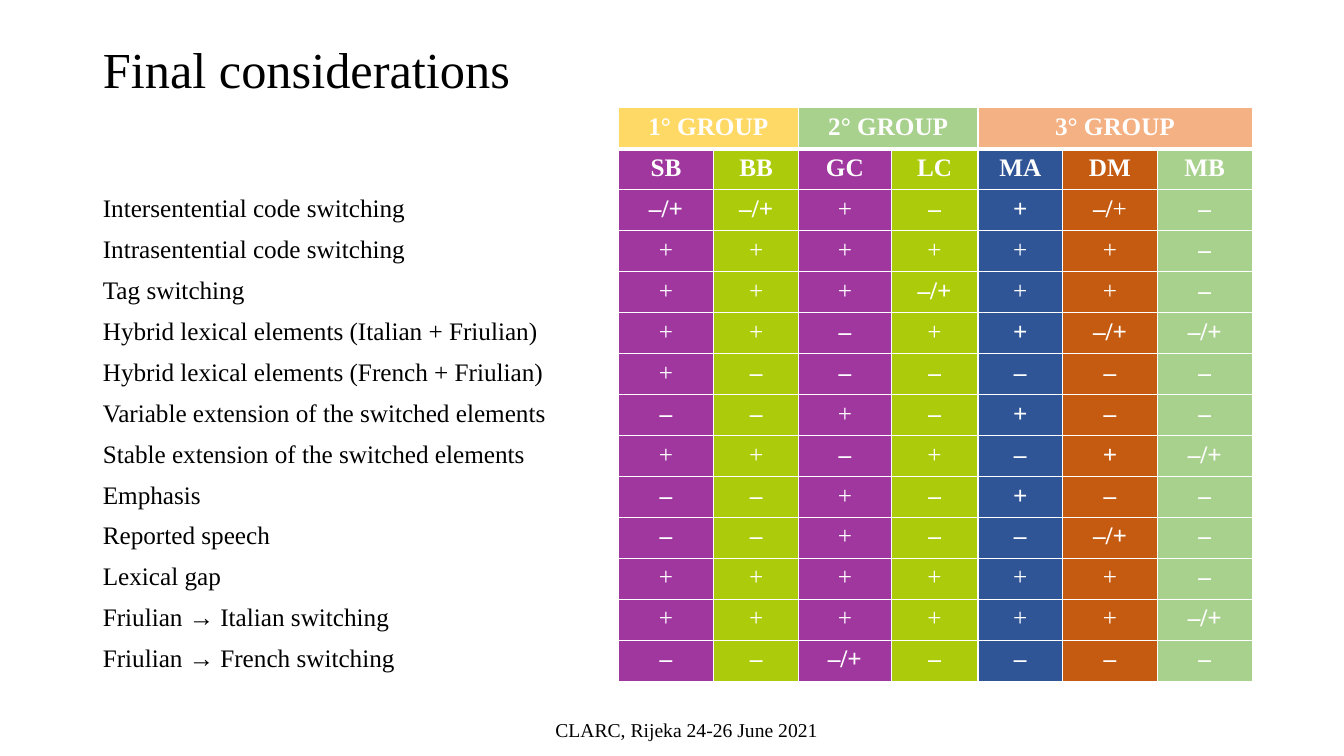
"""Build the "Final considerations" slide with its table of switching features by speaker."""
from lxml import etree
from pptx import Presentation
from pptx.dml.color import RGBColor
from pptx.enum import text
from pptx.oxml import ns
from pptx.util import Inches, Pt

FONT = "Times New Roman"
BLACK = RGBColor(0x00, 0x00, 0x00)
WHITE = RGBColor(0xFF, 0xFF, 0xFF)
YELLOW = RGBColor(0xFF, 0xD9, 0x66)
GREEN = RGBColor(0xA9, 0xD1, 0x8E)
PEACH = RGBColor(0xF4, 0xB1, 0x83)
PURPLE = RGBColor(0x9F, 0x37, 0x9F)
LIME = RGBColor(0xAB, 0xCB, 0x0B)
BLUE = RGBColor(0x2F, 0x55, 0x97)
ORANGE = RGBColor(0xC5, 0x5A, 0x11)

GROUPS = [("1° GROUP", YELLOW, 1, 2), ("2° GROUP", GREEN, 3, 4), ("3° GROUP", PEACH, 5, 7)]
SPEAKERS = [("SB", PURPLE), ("BB", LIME), ("GC", PURPLE), ("LC", LIME),
            ("MA", BLUE), ("DM", ORANGE), ("MB", GREEN)]
FEATURES = [
    ("Intersentential code switching", "–/+ –/+ + – + –/+ –"),
    ("Intrasentential code switching", "+ + + + + + –"),
    ("Tag switching", "+ + + –/+ + + –"),
    ("Hybrid lexical elements (Italian + Friulian)", "+ + – + + –/+ –/+"),
    ("Hybrid lexical elements (French + Friulian)", "+ – – – – – –"),
    ("Variable extension of the switched elements", "– – + – + – –"),
    ("Stable extension of the switched elements", "+ + – + – + –/+"),
    ("Emphasis", "– – + – + – –"),
    ("Reported speech", "– – + – – –/+ –"),
    ("Lexical gap", "+ + + + + + –"),
    ("Friulian → Italian switching", "+ + + + + + –/+"),
    ("Friulian → French switching", "– – –/+ – – – –"),
]
BOLD_PLUSES = {(2, 5), (5, 5), (7, 5), (9, 5), (8, 6)}
MIXED_MARK = (2, 6)
COLUMN_WIDTHS = [5.21, 0.95, 0.84, 0.92, 0.86, 0.84, 0.94, 0.94]
ROW_HEIGHT = 5.69 / 14


def write(para, words, size, color, bold=False, align=text.PP_ALIGN.LEFT):
    para.text = words
    para.alignment = align
    para.font.name = FONT
    para.font.size = Pt(size)
    para.font.color.rgb = color
    para.font.bold = bold


def fill_cell(cell, words, fill, bold=True):
    cell.fill.solid()
    cell.fill.fore_color.rgb = fill
    write(cell.text_frame.paragraphs[0], words, 18, WHITE, bold, text.PP_ALIGN.CENTER)


deck = Presentation()
deck.slide_width = Inches(13.33)
deck.slide_height = Inches(7.5)
page = deck.slides.add_slide(deck.slide_layouts[5])

title = page.shapes.title
title.left, title.top, title.width, title.height = (Inches(n) for n in (0.92, 0.4, 11.5, 0.63))
title.text_frame.auto_size = text.MSO_AUTO_SIZE.NONE
title.text_frame.vertical_anchor = text.MSO_ANCHOR.MIDDLE
write(title.text_frame.paragraphs[0], "Final considerations", 36, BLACK)
title.text_frame.paragraphs[0].line_spacing = 0.9

frame = page.shapes.add_table(len(FEATURES) + 2, len(COLUMN_WIDTHS),
                              Inches(0.92), Inches(1.07), Inches(11.5), Inches(5.69))
table = frame.table
table.horz_banding = False
for column, width in zip(table.columns, COLUMN_WIDTHS):
    column.width = Inches(width)
for row in table.rows:
    row.height = Inches(ROW_HEIGHT)

for row_index in range(len(table.rows)):
    for column_index in range(len(table.columns)):
        cell = table.cell(row_index, column_index)
        borders = cell._tc.get_or_add_tcPr()
        thick_side = {0: "lnB", 1: "lnT"}.get(row_index)
        for side in ("lnL", "lnR", "lnT", "lnB"):
            line = etree.SubElement(borders, ns.qn("a:" + side),
                                    w=str(Pt(3 if side == thick_side else 1)))
            paint = etree.SubElement(line, ns.qn("a:solidFill"))
            etree.SubElement(paint, ns.qn("a:srgbClr"), val=str(WHITE))
        cell.fill.background()

for name, color, first, last in GROUPS:
    table.cell(0, first).merge(table.cell(0, last))
    fill_cell(table.cell(0, first), name, color)
for column_index, (name, color) in enumerate(SPEAKERS, 1):
    fill_cell(table.cell(1, column_index), name, color)

for row_index, (feature, marks) in enumerate(FEATURES, 2):
    write(table.cell(row_index, 0).text_frame.paragraphs[0], feature, 18, BLACK)
    for column_index, mark in enumerate(marks.split(), 1):
        place = (row_index, column_index)
        bold = mark != "+" or place in BOLD_PLUSES
        fill_cell(table.cell(*place), mark, SPEAKERS[column_index - 1][1], bold)

mixed = table.cell(*MIXED_MARK).text_frame.paragraphs[0]
mixed.runs[0].text = "–/"
plus = mixed.add_run()
plus.text = "+"
mixed.font.bold = None
for span, bold in zip(mixed.runs, (True, False)):
    span.font.bold = bold
    span.font.name = FONT
    span.font.size = Pt(18)
    span.font.color.rgb = WHITE

footer = page.shapes.add_textbox(Inches(1.55), Inches(7.1), Inches(10.52), Inches(0.3))
footer.text_frame.word_wrap = True
venue = footer.text_frame.paragraphs[0]
write(venue, "CLARC, Rijeka 24-26 June 2021", 14, BLACK, align=text.PP_ALIGN.CENTER)
venue.line_spacing = 0.9
venue.space_before = Pt(10)

deck.save("out.pptx")
